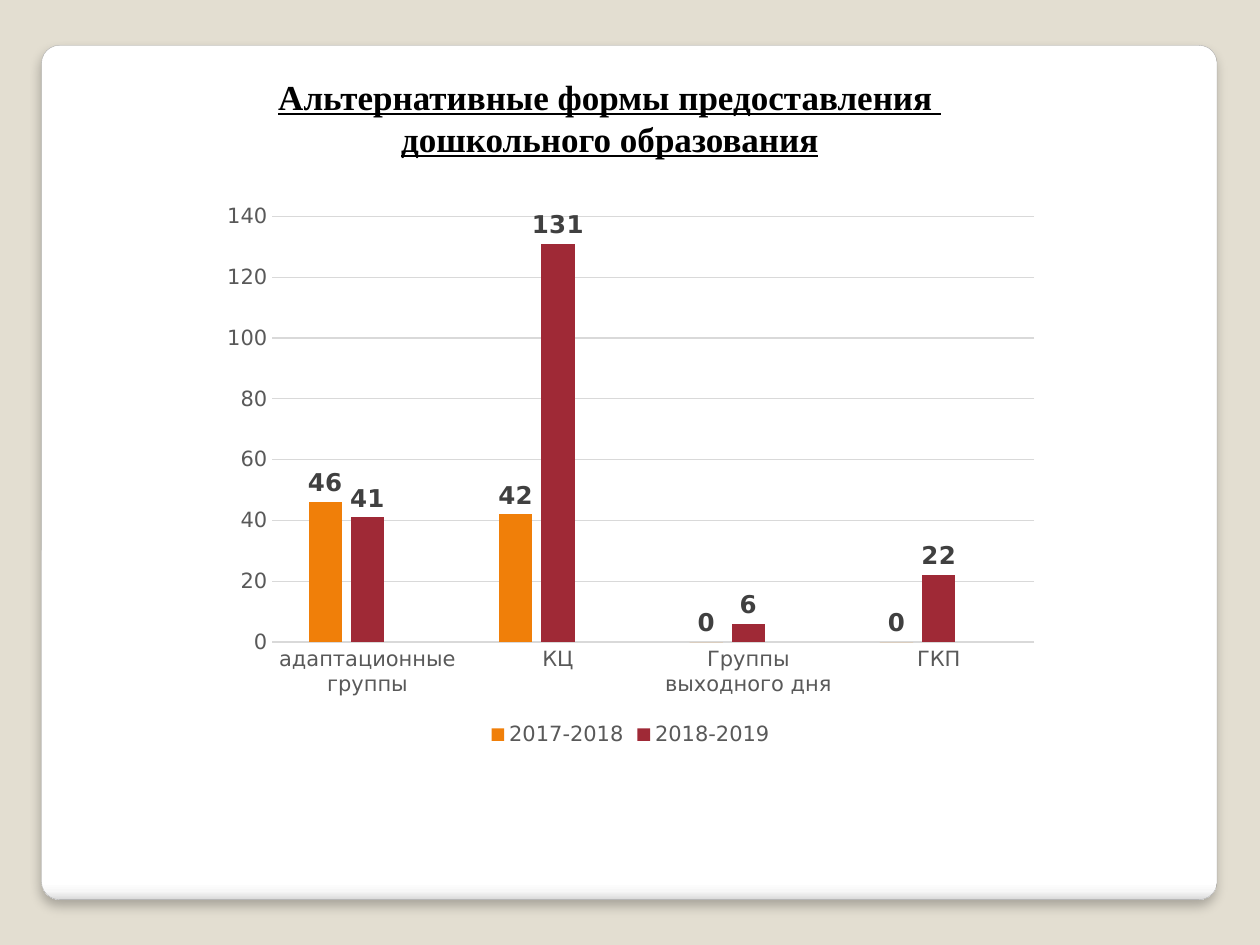
import pptx
import pptx.chart.data
import pptx.dml.color
import pptx.enum.chart
import pptx.enum.shapes
import pptx.enum.text
import pptx.oxml
import pptx.oxml.ns
import pptx.util

Inches, Pt = pptx.util.Inches, pptx.util.Pt
XL = pptx.enum.chart

TITLE = ["Альтернативные формы предоставления ", "дошкольного образования"]
CATEGORIES = ["адаптационные группы", "КЦ", "Группы выходного дня", "ГКП"]
# The empty third series keeps its slot in each cluster.
SERIES = [
    ("2017-2018", [46, 42, 0, 0], "orange"),
    ("2018-2019", [41, 131, 6, 22], "red"),
    ("Series 3", [None] * 4, "blue"),
]
COLORS = {
    "page": "E3DED1", "edge": "A4A4A4", "title": "000000", "axis": "595959",
    "grid": "D9D9D9", "label": "404040",
    "orange": "F07F09", "red": "9F2936", "blue": "1B587C",
}
PANEL_STOPS = [(0, "FFFFFF"), (98, "FFFFFF"), (99, "F7F7F7"), (100, "DADADA")]
TITLE_FONT, CHART_FONT = "Times New Roman", "DejaVu Sans"


def rgb(name):
    return pptx.dml.color.RGBColor.from_string(COLORS[name])


def style_font(font, size, color, face=CHART_FONT, bold=False):
    font.size, font.name, font.bold = Pt(size), face, bold
    font.color.rgb = rgb(color)


def paint(fill, color):
    fill.solid()
    fill.fore_color.rgb = rgb(color)


def xml(text):
    return pptx.oxml.parse_xml(text.replace(">", f" {pptx.oxml.ns.nsdecls('a', 'c')}>", 1))


def add_panel(page):
    panel = page.shapes.add_shape(
        pptx.enum.shapes.MSO_SHAPE.ROUNDED_RECTANGLE,
        Inches(0.33), Inches(0.36), Inches(9.33), Inches(6.78))
    panel.adjustments[0] = 0.021
    panel.line.color.rgb = rgb("edge")
    panel.line.width = Pt(0.16)
    panel.fill.gradient()
    panel.fill.gradient_angle = 270
    stops = panel.fill.gradient_stops[0]._gs.getparent()
    for stop in list(stops):
        stops.remove(stop)
    for percent, color in PANEL_STOPS:
        stops.append(xml(f'<a:gs pos="{percent * 1000}"><a:srgbClr val="{color}"/></a:gs>'))
    panel.shadow.inherit = False
    effects = panel._element.spPr.find(pptx.oxml.ns.qn("a:effectLst"))
    effects.append(xml(
        f'<a:outerShdw blurRad="{Pt(6)}" dist="{Pt(4)}" dir="5400000" rotWithShape="0">'
        '<a:srgbClr val="000000"><a:alpha val="25000"/></a:srgbClr></a:outerShdw>'))


def add_title(page):
    box = page.shapes.add_textbox(Inches(0.7), Inches(0.55), Inches(8.28), Inches(0.77))
    frame = box.text_frame
    frame.word_wrap = True
    for index, line in enumerate(TITLE):
        para = frame.add_paragraph() if index else frame.paragraphs[0]
        para.alignment = pptx.enum.text.PP_ALIGN.CENTER
        para.line_spacing = Pt(24)
        span = para.add_run()
        span.text = line
        style_font(span.font, 20, "title", TITLE_FONT, bold=True)
        span.font.underline = True


def add_groups_chart(page):
    data = pptx.chart.data.CategoryChartData()
    data.categories = CATEGORIES
    for name, values, _ in SERIES:
        data.add_series(name, values)
    chart = page.shapes.add_chart(
        XL.XL_CHART_TYPE.COLUMN_CLUSTERED,
        Inches(1.67), Inches(1.53), Inches(6.67), Inches(4.44), data).chart
    chart.has_title = False
    style_font(chart.font, 10, "title")

    plot = chart.plots[0]
    plot.gap_width, plot.overlap, plot.vary_by_categories = 219, -27, False
    for series, (_, values, color) in zip(plot.series, SERIES):
        paint(series.format.fill, color)
        series.invert_if_negative = False
        if any(values):
            labels = series.data_labels
            labels.show_value = True
            labels.position = XL.XL_LABEL_POSITION.OUTSIDE_END
            style_font(labels.font, 14, "label", bold=True)

    for axis in (chart.category_axis, chart.value_axis):
        axis.major_tick_mark = axis.minor_tick_mark = XL.XL_TICK_MARK.NONE
        style_font(axis.tick_labels.font, 12, "axis")
    chart.value_axis.format.line.fill.background()
    chart.value_axis.has_major_gridlines = True
    for line in (chart.category_axis.format.line,
                 chart.value_axis.major_gridlines.format.line):
        line.color.rgb = rgb("grid")
        line.width = Pt(0.75)

    chart.has_legend = True
    legend = chart.legend
    legend.position = XL.XL_LEGEND_POSITION.BOTTOM
    legend.include_in_layout = False
    style_font(legend.font, 12, "axis")
    legend._element.find(pptx.oxml.ns.qn("c:legendPos")).addnext(xml(
        '<c:legendEntry><c:idx val="2"/><c:delete val="1"/></c:legendEntry>'))


def main():
    deck = pptx.Presentation()
    deck.slide_width, deck.slide_height = Inches(10), Inches(7.5)
    page = deck.slides.add_slide(deck.slide_layouts[6])
    paint(page.background.fill, "page")
    add_panel(page)
    add_title(page)
    add_groups_chart(page)
    deck.save("out.pptx")


if __name__ == "__main__":
    main()
